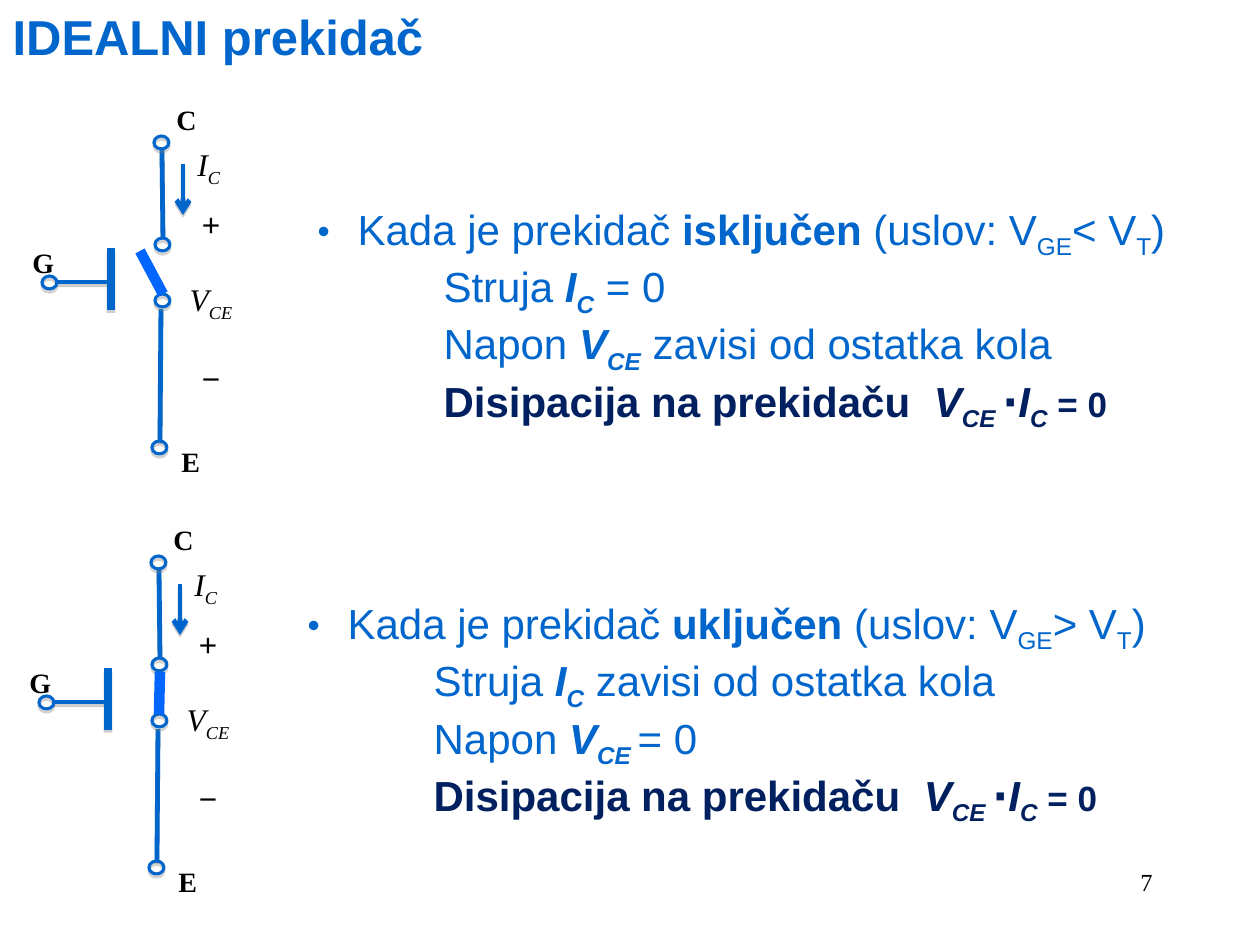
from typing import NamedTuple, Optional

from lxml import etree
from pptx import Presentation
from pptx.dml.color import RGBColor
from pptx.enum.shapes import MSO_CONNECTOR, MSO_SHAPE
from pptx.enum.text import MSO_ANCHOR, MSO_AUTO_SIZE, PP_ALIGN
from pptx.oxml.ns import qn
from pptx.util import Emu, Pt

STRAIGHT, OVAL = MSO_CONNECTOR.STRAIGHT, MSO_SHAPE.OVAL
LEFT, CENTER, RIGHT = PP_ALIGN.LEFT, PP_ALIGN.CENTER, PP_ALIGN.RIGHT
TOP, NO_FIT = MSO_ANCHOR.TOP, MSO_AUTO_SIZE.NONE

PX_PER_INCH = 126
BLUE, BLADE_BLUE, NAVY, BLACK, GRAY = "0066CC", "0066FF", "002060", "000000", "808080"
SANS, SERIF = "Arial", "Times New Roman"


class Run(NamedTuple):
    text: str
    bold: bool = False
    italic: bool = False
    sub: bool = False
    size: Optional[int] = None
    font: Optional[str] = None


class Wire(NamedTuple):
    x1: int
    y1: int
    x2: int
    y2: int
    width: float = 2.75
    color: str = BLUE
    arrow: bool = False
    shadow: bool = True


class Label(NamedTuple):
    x: int
    y: int
    w: int
    h: int
    lines: list
    size: int = 16
    align: int = LEFT
    wrap: bool = True
    gap: int = 0


class State(NamedTuple):
    dx: int
    dy: int
    blade: Wire
    text_x: int
    text_y: int
    lines: list


def px(n: int) -> Emu:
    return Emu(round(n * 914400 / PX_PER_INCH))


def rgb(color: str) -> RGBColor:
    return RGBColor.from_string(color)


def write(paragraph, runs, *, size, font, color, align=LEFT, before=0) -> None:
    paragraph.alignment = align
    paragraph.space_before = Pt(before)
    for part in runs:
        run = paragraph.add_run()
        run.text = part.text
        run.font.size = Pt(part.size or size)
        run.font.name = part.font or font
        run.font.bold, run.font.italic = part.bold, part.italic
        run.font.color.rgb = rgb(color)
        if part.sub:
            run._r.get_or_add_rPr().set("baseline", "-25000")


def set_effect(shape, distance: float = 0, alpha: int = 0) -> None:
    """Drop a shadow straight down, or none when distance is zero."""
    effects = etree.SubElement(shape._element.spPr, qn("a:effectLst"))
    if distance:
        shadow = etree.SubElement(effects, qn("a:outerShdw"), blurRad="0",
                                  dist=str(Pt(distance)), dir="5400000", rotWithShape="0")
        tint = etree.SubElement(shadow, qn("a:srgbClr"), val=GRAY)
        etree.SubElement(tint, qn("a:alpha"), val=str(alpha * 1000))


def draw_wire(shapes, wire: Wire, dx: int, dy: int) -> None:
    line = shapes.add_connector(STRAIGHT, px(wire.x1 + dx), px(wire.y1 + dy),
                                px(wire.x2 + dx), px(wire.y2 + dy))
    line.line.color.rgb = rgb(wire.color)
    line.line.width = Pt(wire.width)
    if wire.arrow:
        etree.SubElement(line.line._get_or_add_ln(), qn("a:tailEnd"), type="arrow")
    set_effect(line, 1.6 if wire.shadow else 0, 38)


def draw_terminal(shapes, x: int, y: int) -> None:
    ring = shapes.add_shape(OVAL, px(x), px(y), px(15), px(13))
    ring.fill.background()
    ring.line.color.rgb = rgb(BLUE)
    ring.line.width = Pt(1.75)
    set_effect(ring, 1.8, 35)


def draw_label(shapes, label: Label, dx: int = 0, dy: int = 0) -> None:
    box = shapes.add_textbox(px(label.x + dx), px(label.y + dy), px(label.w), px(label.h))
    frame = box.text_frame
    frame.word_wrap = label.wrap
    for i, runs in enumerate(label.lines):
        paragraph = frame.add_paragraph() if i else frame.paragraphs[0]
        write(paragraph, runs, size=label.size, font=SERIF, color=BLACK,
              align=label.align, before=label.gap if i else 0)


def place(holder, x: int, y: int, w: int, h: int):
    holder.left, holder.top, holder.width, holder.height = px(x), px(y), px(w), px(h)
    frame = holder.text_frame
    frame.word_wrap, frame.auto_size, frame.vertical_anchor = True, NO_FIT, TOP
    return frame


def fill_body(holder, state: State) -> None:
    frame = place(holder, state.text_x, state.text_y, 914, 240)
    for i, runs in enumerate(state.lines):
        paragraph = frame.add_paragraph() if i else frame.paragraphs[0]
        props = paragraph._p.get_or_add_pPr()
        props.set("marL", str(px(126 if i else 40)))
        props.set("indent", str(px(0 if i else -40)))
        if i:
            etree.SubElement(props, qn("a:buNone"))
        else:
            etree.SubElement(props, qn("a:buSzPct"), val="83000")
            etree.SubElement(props, qn("a:buFont"), typeface=SANS)
            etree.SubElement(props, qn("a:buChar"), char="•")
        write(paragraph, runs, size=24, font=SANS,
              color=NAVY if runs is DISSIPATION else BLUE)


def variable(letter: str, index: str) -> list:
    return [Run(letter, True, True), Run(index, True, True, True)]


def condition(state_word: str, sign: str) -> list:
    return [Run("Kada je prekidač "), Run(state_word, True), Run(" (uslov: V"),
            Run("GE", sub=True), Run(f"{sign} V"), Run("T", sub=True), Run(")")]


DISSIPATION = [Run("Disipacija na prekidaču  ", True), *variable("V", "CE "),
               Run("⋅", True), *variable("I", "C"), Run(" = 0", True, size=20)]

# Parts shared by both switch symbols
WIRES = [
    Wire(55, 282, 110, 282),            # gate lead
    Wire(111, 310, 111, 248, 5),        # gate plate
    Wire(163, 237, 162, 150),           # collector
    Wire(160, 441, 161, 309),           # emitter
    Wire(183, 164, 183, 215, arrow=True),
]
TERMINALS = [(154, 136), (152, 441), (42, 276), (155, 238), (155, 294)]
LABELS = [
    Label(20, 239, 50, 47, [[Run("G", True)]]),
    Label(164, 96, 50, 47, [[Run("C", True)]]),
    Label(169, 438, 50, 47, [[Run("E", True)]]),
    Label(175, 199, 72, 204,
          [[Run("+", font=SANS)],
           [Run("V", italic=True), Run("CE", italic=True, sub=True)],
           [Run("−", font=SANS)]], 18, CENTER, False, 21),
    Label(185, 139, 50, 50,
          [[Run("I", italic=True), Run("C", italic=True, sub=True)]], 18, wrap=False),
]

STATES = [
    State(0, 0, Wire(163, 294, 140, 251, 6, BLADE_BLUE, shadow=False), 305, 197, [
        condition("isključen", "<"),
        [Run("Struja "), *variable("I", "C"), Run(" = 0")],
        [Run("Napon "), *variable("V", "CE"), Run(" zavisi od ostatka kola")],
        DISSIPATION]),
    State(-3, 420, Wire(162, 294, 163, 252, 6, BLADE_BLUE, shadow=False), 295, 591, [
        condition("uključen", ">"),
        [Run("Struja "), *variable("I", "C"), Run(" zavisi od ostatka kola")],
        [Run("Napon "), *variable("V", "CE "), Run("= 0")],
        DISSIPATION]),
]


def main() -> None:
    deck = Presentation()
    deck.slide_width, deck.slide_height = px(1260), px(945)
    slide = deck.slides.add_slide(deck.slide_layouts[3])
    heading, *bodies = slide.placeholders

    # Title
    frame = place(heading, 0, 0, 1239, 72)
    write(frame.paragraphs[0], [Run("IDEALNI prekidač", True)], size=28, font=SANS, color=BLUE)

    # Switch symbol and explanation for each state
    for body, state in zip(bodies, STATES):
        fill_body(body, state)
        symbol = slide.shapes.add_group_shape().shapes
        for wire in WIRES:
            draw_wire(symbol, wire, state.dx, state.dy)
        for x, y in TERMINALS:
            draw_terminal(symbol, x + state.dx, y + state.dy)
        for label in LABELS:
            draw_label(symbol, label, state.dx, state.dy)
        draw_wire(symbol, state.blade, state.dx, state.dy)

    # Page number
    draw_label(slide.shapes, Label(903, 861, 262, 63, [[Run("7")]], 14, RIGHT))
    deck.save("out.pptx")


if __name__ == "__main__":
    main()
